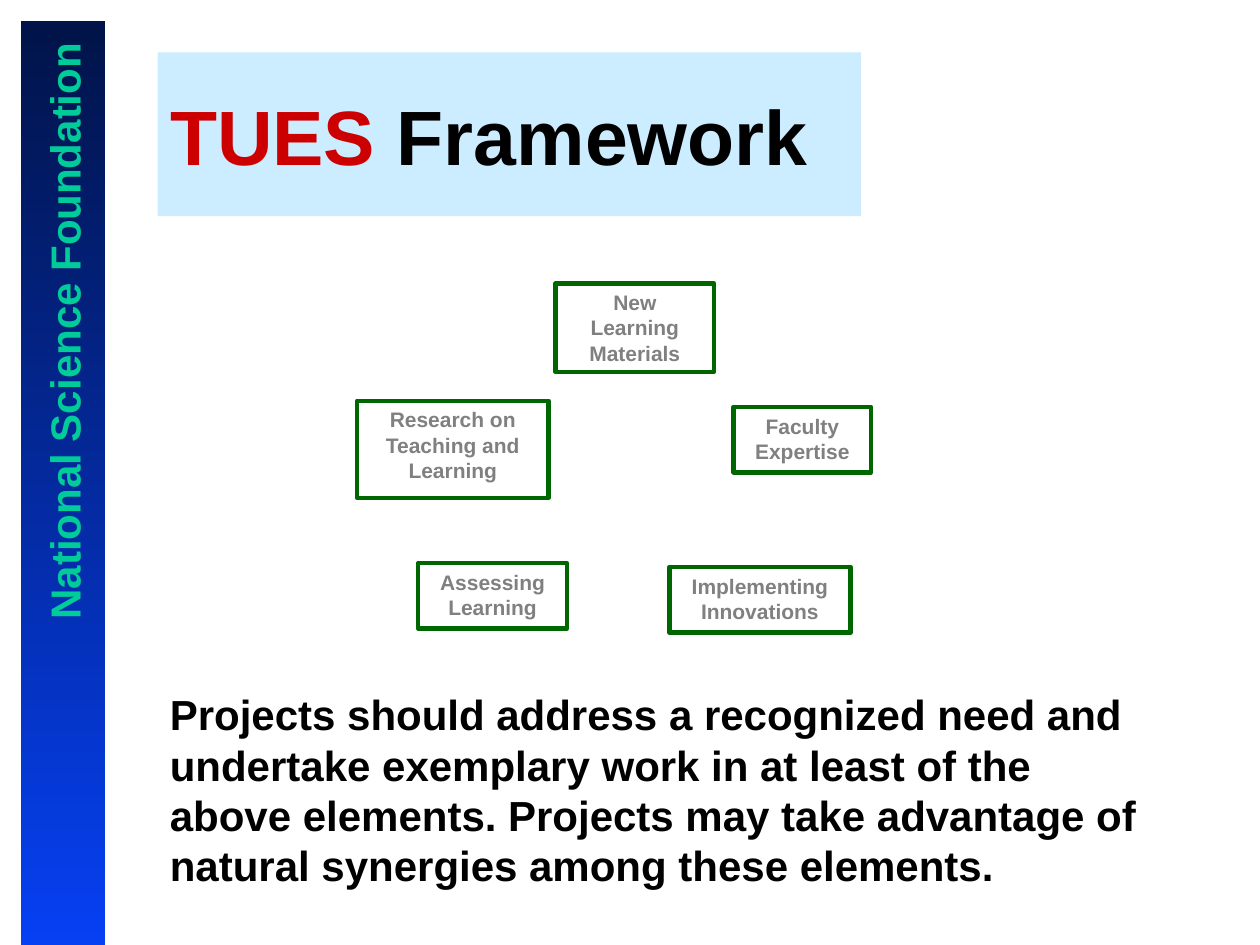
"""Build the TUES Framework slide with its side banner and five element boxes."""
import pptx
import pptx.util
import pptx.dml.color
import pptx.enum.shapes
import pptx.enum.text

Pt = pptx.util.Pt
RGB = pptx.dml.color.RGBColor.from_string
PP = pptx.enum.text.PP_ALIGN
ANCHOR = pptx.enum.text.MSO_ANCHOR
RECT = pptx.enum.shapes.MSO_SHAPE.RECTANGLE

THEME = {
    "font": "Arial",
    "banner_top": "011348", "banner_bottom": "0640F3", "banner_text": "00CC99",
    "title_fill": "CCECFF", "accent": "CC0000", "text": "000000",
    "box_fill": "FFFFFF", "box_line": "006600", "box_text": "808080",
    "title_size": 44, "body_size": 24, "box_size": 12,
}


def place(sp, left, top, width, height):
    for name, value in zip(("left", "top", "width", "height"), (left, top, width, height)):
        setattr(sp, name, Pt(value))


def write(sp, runs, size, align=PP.LEFT, anchor=ANCHOR.TOP):
    tf = sp.text_frame
    fmt = {"word_wrap": True, "auto_size": pptx.enum.text.MSO_AUTO_SIZE.NONE,
           "vertical_anchor": anchor}
    for name, value in fmt.items():
        setattr(tf, name, value)
    p = tf.paragraphs[0]
    p.alignment = align
    for text, color in runs:
        r = p.add_run()
        r.text = text
        for name, value in {"name": THEME["font"], "size": Pt(size), "bold": True}.items():
            setattr(r.font, name, value)
        r.font.color.rgb = RGB(THEME[color])


prs = pptx.Presentation()
prs.slide_width, prs.slide_height = Pt(720), Pt(540)
s = prs.slides.add_slide(prs.slide_layouts[5])

banner = s.shapes.add_shape(RECT, Pt(12), Pt(12), Pt(48), Pt(528))
banner.shadow.inherit = False
banner.line.fill.background()
banner.fill.gradient()
banner.fill.gradient_angle = 270
for stop, color in zip(banner.fill.gradient_stops, ("banner_top", "banner_bottom")):
    stop.color.rgb = RGB(THEME[color])

label = s.shapes.add_textbox(Pt(-144), Pt(162.5), Pt(361), Pt(36))
label.rotation = 270
write(label, [("National Science Foundation", "banner_text")], THEME["body_size"])

boxes = [
    ("Research on Teaching and Learning", 204, 229, 109.5, 55.5),
    ("Implementing Innovations", 382.5, 324, 103.5, 37.5),
    ("New Learning Materials", 317.5, 162, 90.5, 50.5),
    ("Faculty Expertise", 419.25, 232.5, 78.5, 37.5),
    ("Assessing Learning", 239, 321.75, 85, 37.5),
]
for text, *box in boxes:
    sp = s.shapes.add_shape(RECT, *map(Pt, box))
    sp.shadow.inherit = False
    sp.fill.solid()
    sp.fill.fore_color.rgb = RGB(THEME["box_fill"])
    sp.line.color.rgb = RGB(THEME["box_line"])
    sp.line.width = Pt(2.5)
    write(sp, [(text, "box_text")], THEME["box_size"], PP.CENTER)

body = s.shapes.add_textbox(Pt(90), Pt(390), Pt(576), Pt(122.5))
write(body, [("Projects should address a recognized need and undertake exemplary work "
              "in at least of the above elements. Projects may take advantage of "
              "natural synergies among these elements.", "text")], THEME["body_size"])

title = s.shapes.title
place(title, 90, 30, 402, 93.5)
title.fill.solid()
title.fill.fore_color.rgb = RGB(THEME["title_fill"])
write(title, [("TUES", "accent"), (" Framework", "text")], THEME["title_size"],
      anchor=ANCHOR.MIDDLE)

prs.save("out.pptx")
